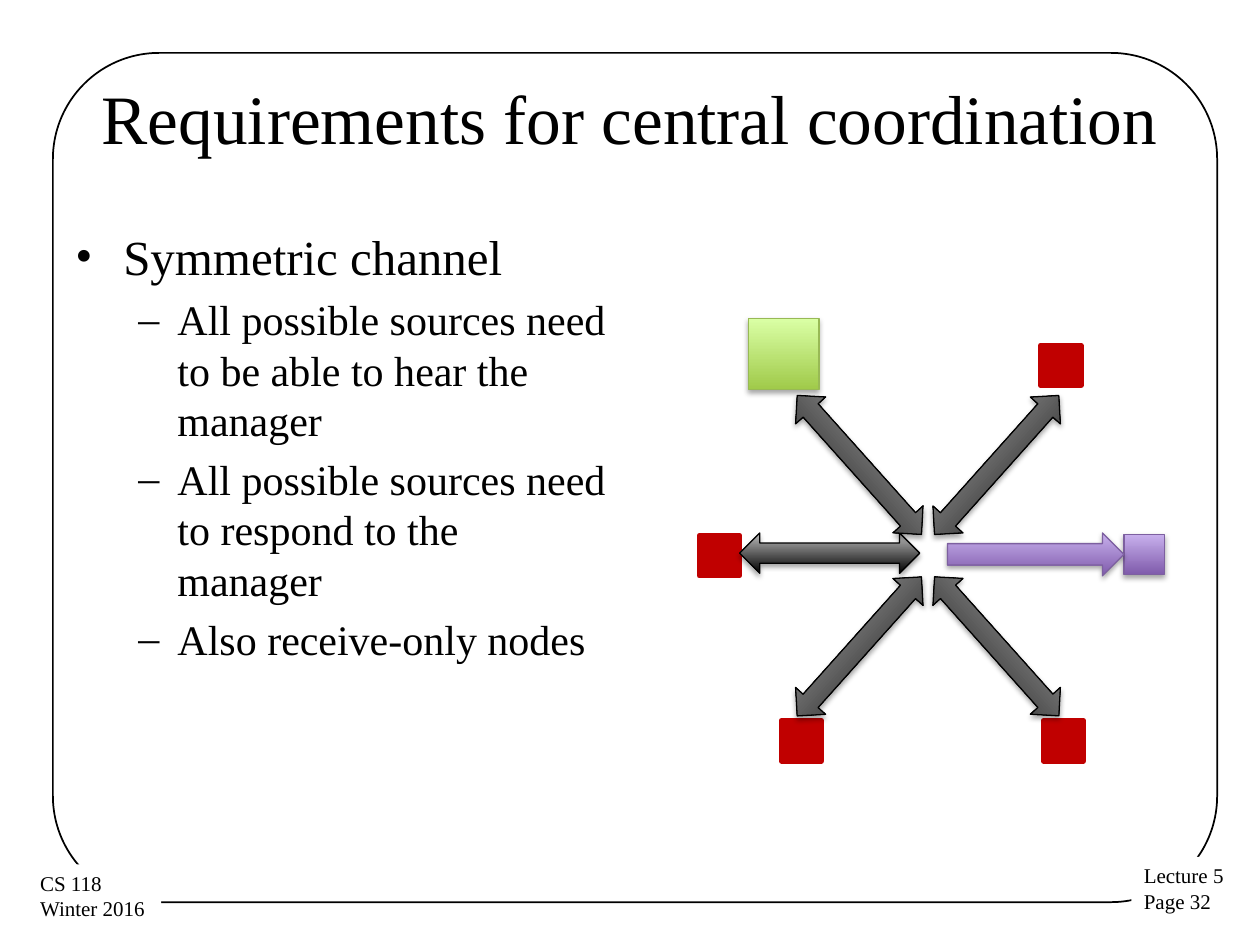
import pptx
import pptx.util
import pptx.dml.color
import pptx.enum.shapes
import pptx.enum.text
from lxml import etree

Inches, Pt = pptx.util.Inches, pptx.util.Pt
SHAPES = pptx.enum.shapes.MSO_SHAPE
FONT = "Times New Roman"
BLACK, WHITE, RED = "000000", "FFFFFF", "C00000"

# Content
TITLE = "Requirements for central coordination"
BULLETS = [  # level, text
    (0, "Symmetric channel"),
    (1, "All possible sources need to be able to hear the manager"),
    (1, "All possible sources need to respond to the manager"),
    (1, "Also receive-only nodes"),
]
LEVELS = [  # bullet, size, left margin, hanging indent
    ("•", 28, 0.38, 0.38),
    ("–", 24, 0.81, 0.31),
]
CORNER_LABELS = [  # left, top, width, height, lines
    (8.98, 6.8, 0.84, 0.51, ["Lecture 5", "Page 32"]),
    (0.22, 6.86, 1.06, 0.51, ["CS 118", "Winter 2016"]),
]
SOURCES = [(8.26, 2.74), (8.28, 5.72), (5.55, 4.25), (6.2, 5.72)]
NODE = 0.32

# Gradients run from bottom to top: bottom, top, outline
PURPLE = ("7F5BAB", "C8B0ED", "7D60A0")
GREEN = ("A0CA4A", "DAFFA5", "98B955")
GREY = (BLACK, "BDBDBD", BLACK)

# Diagonal arrows sit symmetrically around the hub
HUB_X, HUB_Y = 7.365, 4.41
STEP_X, STEP_Y = 0.545, 0.72
ARROW_LENGTH, ARROW_HEIGHT, TILT = 1.48, 0.32, 48.2


def color(value):
    return pptx.dml.color.RGBColor.from_string(value)


def add_xml(parent, tag, **attributes):
    return etree.SubElement(parent, pptx.oxml.ns.qn(tag), attributes)


def format_text(para, size):
    for span in para.runs:
        span.font.name = FONT
        span.font.size = Pt(size)
        span.font.color.rgb = color(BLACK)


def add_shape(slide, kind, left, top, width, height, fill=None, line=None, weight=0.75):
    shape = slide.shapes.add_shape(
        kind, Inches(left), Inches(top), Inches(width), Inches(height))
    shape.shadow.inherit = False
    if fill:
        shape.fill.solid()
        shape.fill.fore_color.rgb = color(fill)
    else:
        shape.fill.background()
    if line:
        shape.line.color.rgb = color(line)
        shape.line.width = Pt(weight)
    else:
        shape.line.fill.background()
    return shape


def add_shaded(slide, kind, left, top, width, height, palette, rotation=0):
    bottom, top_color, outline = palette
    shape = add_shape(slide, kind, left, top, width, height, line=outline)
    shape.rotation = rotation
    shape.fill.gradient()
    shape.fill.gradient_angle = 90
    for stop, value, position in zip(shape.fill.gradient_stops, (bottom, top_color), (0, 1)):
        stop.color.rgb = color(value)
        stop.position = position
    # Soft shadow straight below
    effects = shape.element.spPr.find(pptx.oxml.ns.qn("a:effectLst"))
    shadow = add_xml(effects, "a:outerShdw", blurRad=str(Pt(3.1)), dist=str(Pt(1.8)),
                     dir="5400000", rotWithShape="0")
    tint = add_xml(shadow, "a:srgbClr", val=BLACK)
    add_xml(tint, "a:alpha", val="35000")


def add_frame(slide):
    frame = add_shape(slide, SHAPES.ROUNDED_RECTANGLE, 0.42, 0.42, 9.24, 6.74,
                      line=BLACK, weight=1)
    frame.adjustments[0] = 0.125
    for left, top, width, height, lines in CORNER_LABELS:
        label = add_shape(slide, SHAPES.RECTANGLE, left, top, width, height, fill=WHITE)
        label.text_frame.text = "\n".join(lines)
        label.text_frame.word_wrap = False
        label.text_frame.vertical_anchor = pptx.enum.text.MSO_ANCHOR.TOP
        for para in label.text_frame.paragraphs:
            para.alignment = pptx.enum.text.PP_ALIGN.LEFT
            format_text(para, 12)


def add_title(slide):
    title = slide.shapes.title
    title.left, title.top = Inches(0.5), Inches(0.3)
    title.width, title.height = Inches(9), Inches(1.25)
    title.text_frame.text = TITLE
    title.text_frame.vertical_anchor = pptx.enum.text.MSO_ANCHOR.MIDDLE
    para = title.text_frame.paragraphs[0]
    para.alignment = pptx.enum.text.PP_ALIGN.CENTER
    format_text(para, 39.6)


def add_bullets(slide):
    box = slide.shapes.add_textbox(Inches(0.5), Inches(1.75), Inches(4.42), Inches(4.95))
    box.text_frame.word_wrap = True
    box.text_frame.text = "\n".join(text for _, text in BULLETS)
    for para, (level, _) in zip(box.text_frame.paragraphs, BULLETS):
        bullet, size, margin, hanging = LEVELS[level]
        para.level = level
        para.space_before = Pt(size * 0.2)
        format_text(para, size)
        properties = para._p.get_or_add_pPr()
        properties.set("marL", str(Inches(margin)))
        properties.set("indent", str(-Inches(hanging)))
        add_xml(properties, "a:buFont", typeface=FONT)
        add_xml(properties, "a:buChar", char=bullet)


def add_network(slide):
    # Nodes
    for left, top in SOURCES:
        add_shape(slide, SHAPES.RECTANGLE, left, top, NODE, NODE, RED, RED, 3)
    add_shaded(slide, SHAPES.RECTANGLE, 8.92, 4.24, NODE, NODE, PURPLE)
    add_shaded(slide, SHAPES.RECTANGLE, 5.94, 2.53, 0.56, 0.56, GREEN)

    # Channels
    add_shaded(slide, SHAPES.LEFT_RIGHT_ARROW, 5.87, 4.23, 1.43, ARROW_HEIGHT, GREY)
    for side_x, side_y in [(-1, 1), (1, -1), (1, 1), (-1, -1)]:
        add_shaded(slide, SHAPES.LEFT_RIGHT_ARROW,
                   HUB_X + side_x * STEP_X - ARROW_LENGTH / 2,
                   HUB_Y + side_y * STEP_Y - ARROW_HEIGHT / 2,
                   ARROW_LENGTH, ARROW_HEIGHT, GREY,
                   rotation=side_x * side_y * TILT % 360)
    add_shaded(slide, SHAPES.RIGHT_ARROW, 7.52, 4.23, 1.4, 0.34, PURPLE)


def main():
    deck = pptx.Presentation()
    deck.slide_width, deck.slide_height = Inches(10), Inches(7.5)
    slide = deck.slides.add_slide(deck.slide_layouts[5])
    add_frame(slide)
    add_title(slide)
    add_bullets(slide)
    add_network(slide)
    deck.save("out.pptx")


if __name__ == "__main__":
    main()
